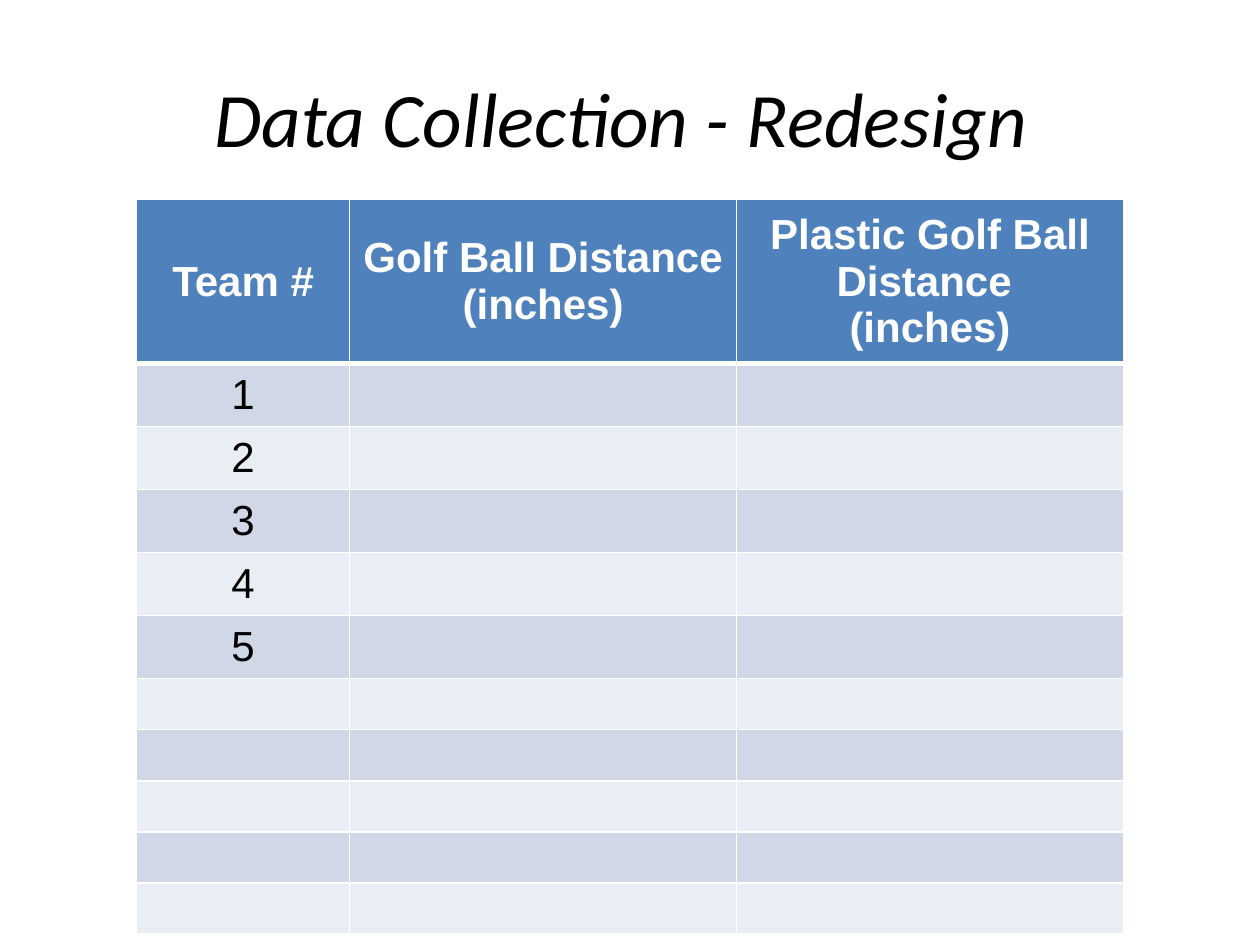
from lxml.etree import SubElement
from pptx import Presentation
from pptx.dml.color import RGBColor
from pptx.enum.text import MSO_ANCHOR, PP_ALIGN
from pptx.oxml.ns import qn
from pptx.util import Pt

BLACK = RGBColor(0x00, 0x00, 0x00)
WHITE = RGBColor(0xFF, 0xFF, 0xFF)
HEADER_BLUE = RGBColor(0x4F, 0x81, 0xBD)
BAND_DARK = RGBColor(0xD0, 0xD8, 0xE8)
BAND_LIGHT = RGBColor(0xE9, 0xED, 0xF4)

HEADERS = ["Team #", "Golf Ball Distance \n(inches)", "Plastic Golf Ball Distance \n(inches)"]
TEAM_COUNT = 5
SPARE_ROWS = 5
COLUMN_SHARES = [0.216, 0.392, 0.392]
HEADER_HEIGHT = 87
TEAM_HEIGHT = 34


def style_paragraph(paragraph, font_name, size, color, bold=False, italic=False):
    """Centre a paragraph and set its font."""
    paragraph.alignment = PP_ALIGN.CENTER
    font = paragraph.font
    font.name, font.size = font_name, Pt(size)
    font.bold, font.italic = bold, italic
    font.color.rgb = color


def set_borders(cell, bottom_width):
    """Draw white borders around a cell."""
    properties = cell._tc.get_or_add_tcPr()
    for side in ("L", "R", "T", "B"):
        width = bottom_width if side == "B" else 1
        line = SubElement(properties, qn(f"a:ln{side}"), w=str(Pt(width)))
        fill = SubElement(line, qn("a:solidFill"))
        SubElement(fill, qn("a:srgbClr"), val=str(WHITE))


def fill_cell(cell, text, fill_color, text_color, bold, bottom_width):
    """Give a cell its borders, fill and centred text."""
    set_borders(cell, bottom_width)
    cell.fill.solid()
    cell.fill.fore_color.rgb = fill_color
    if text:
        cell.text = text
        cell.vertical_anchor = MSO_ANCHOR.MIDDLE
        for paragraph in cell.text_frame.paragraphs:
            style_paragraph(paragraph, "Arial", 24, text_color, bold=bold)


def add_title(slide, left, top, width, height):
    """Place the slide title in its box."""
    text_frame = slide.shapes.add_textbox(Pt(left), Pt(top), Pt(width), Pt(height)).text_frame
    text_frame.word_wrap = True
    text_frame.vertical_anchor = MSO_ANCHOR.MIDDLE
    text_frame.text = "Data Collection - Redesign "
    style_paragraph(text_frame.paragraphs[0], "Calibri", 44, BLACK, italic=True)


def add_distance_table(slide, left, top, width, height):
    """Place the table of distances, with spare rows sharing the height left over."""
    row_count = 1 + TEAM_COUNT + SPARE_ROWS
    table = slide.shapes.add_table(
        row_count, len(HEADERS), Pt(left), Pt(top), Pt(width), Pt(height)
    ).table
    for column, share in zip(table.columns, COLUMN_SHARES):
        column.width = Pt(width * share)

    spare_height = (height - HEADER_HEIGHT - TEAM_COUNT * TEAM_HEIGHT) / SPARE_ROWS
    heights = [HEADER_HEIGHT] + [TEAM_HEIGHT] * TEAM_COUNT + [spare_height] * SPARE_ROWS
    for row, row_height in zip(table.rows, heights):
        row.height = Pt(row_height)

    for column_index, header in enumerate(HEADERS):
        fill_cell(table.cell(0, column_index), header, HEADER_BLUE, WHITE, True, 3)
    for row_index in range(1, row_count):
        band = BAND_DARK if row_index % 2 else BAND_LIGHT
        for column_index in range(len(HEADERS)):
            is_team = column_index == 0 and row_index <= TEAM_COUNT
            text = str(row_index) if is_team else ""
            fill_cell(table.cell(row_index, column_index), text, band, BLACK, False, 1)


def main():
    """Build and save the presentation."""
    presentation = Presentation()
    presentation.slide_width, presentation.slide_height = Pt(720), Pt(540)
    slide = presentation.slides.add_slide(presentation.slide_layouts[6])
    add_title(slide, 36, 21.6, 648, 90)
    add_distance_table(slide, 78, 114, 564, 403)
    presentation.save("out.pptx")


if __name__ == "__main__":
    main()
